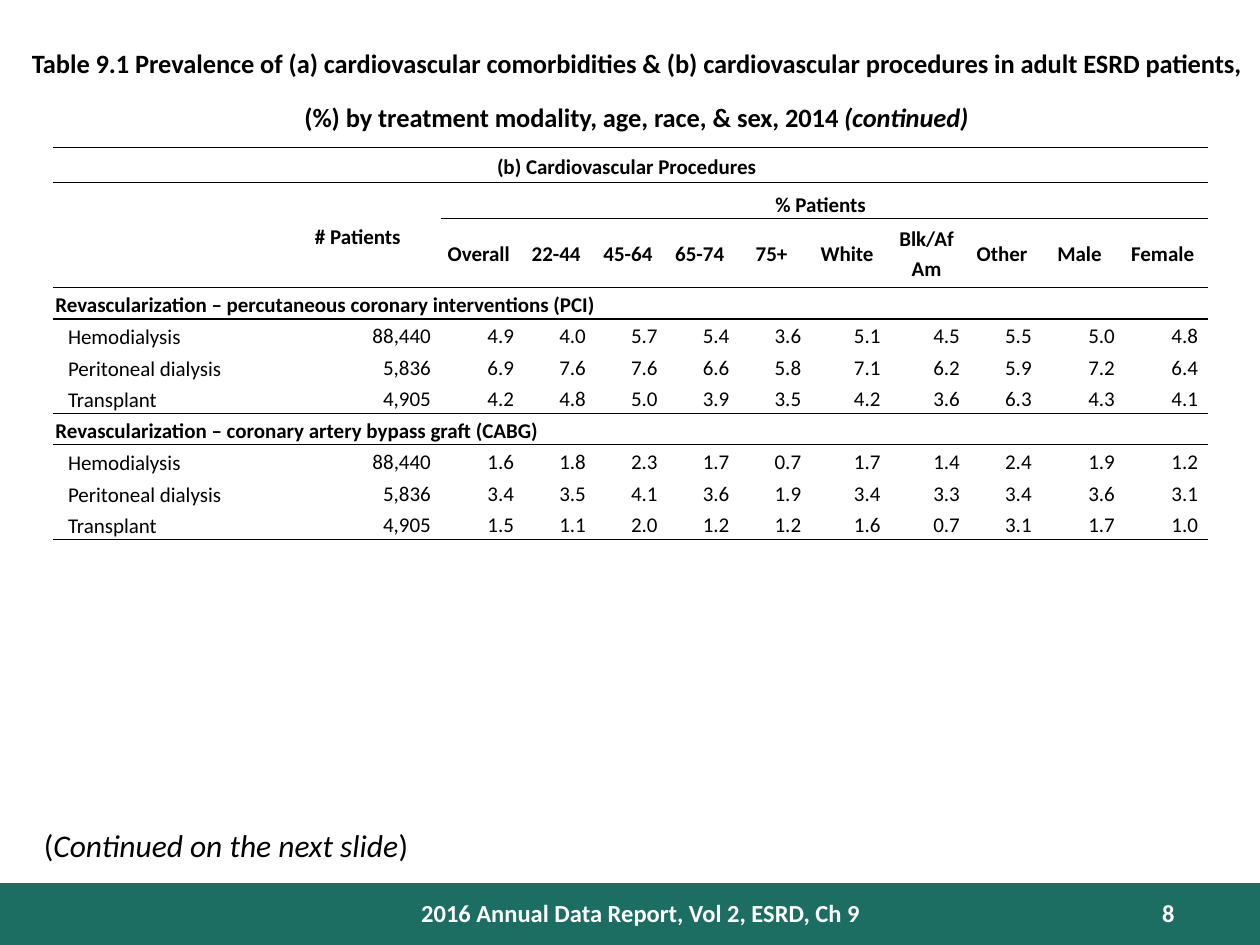
import pptx
import pptx.util
import pptx.dml.color
import pptx.enum.shapes
import pptx.enum.text
from lxml import etree
from pptx.oxml.ns import qn
from pptx.util import Inches, Pt

ALIGN = pptx.enum.text.PP_ALIGN
ANCHOR = pptx.enum.text.MSO_ANCHOR
COLORS = {"text": "000000", "band": "1C6E62", "footer": "FFFFFF"}
FONT = "Calibri"
NO_STYLE = "{2D5ABB26-0587-4C30-8999-92F81FD0307C}"

TITLE = ("Table 9.1 Prevalence of (a) cardiovascular comorbidities & (b) cardiovascular "
         "procedures in adult ESRD patients, (%) by treatment modality, age, race, & sex, 2014 ")
CAPTION = "(b) Cardiovascular Procedures"
GROUPS = ["Overall", "22-44", "45-64", "65-74", "75+", "White", "Blk/Af Am",
          "Other", "Male", "Female"]
SECTIONS = [
    ("Revascularization – percutaneous coronary interventions (PCI)", 7, [
        ("Hemodialysis", "88,440", "4.9 4.0 5.7 5.4 3.6 5.1 4.5 5.5 5.0 4.8"),
        ("Peritoneal dialysis", "5,836", "6.9 7.6 7.6 6.6 5.8 7.1 6.2 5.9 7.2 6.4"),
        ("Transplant", "4,905", "4.2 4.8 5.0 3.9 3.5 4.2 3.6 6.3 4.3 4.1"),
    ]),
    ("Revascularization – coronary artery bypass graft (CABG)", 6, [
        ("Hemodialysis", "88,440", "1.6 1.8 2.3 1.7 0.7 1.7 1.4 2.4 1.9 1.2"),
        ("Peritoneal dialysis", "5,836", "3.4 3.5 4.1 3.6 1.9 3.4 3.3 3.4 3.6 3.1"),
        ("Transplant", "4,905", "1.5 1.1 2.0 1.2 1.2 1.6 0.7 3.1 1.7 1.0"),
    ]),
]
COLUMN_WIDTHS = [1.82, 1.26, 0.66] + [0.57] * 4 + [0.63, 0.63, 0.57, 0.66, 0.66]
ROW_HEIGHTS = [0.28, 0.28, 0.55] + [0.25] * 8
# Horizontal rules: row edge -> line width in points
RULES = {0: 1, 1: 1, 2: 0.5, 3: 1, 7: 0.5, 11: 0.5}


def write(frame, runs, size=12, bold=False, color="text", align=ALIGN.LEFT,
          spacing=None, indent=0, baseline=0):
    """Fill the first paragraph; runs is a string or a list of (text, italic)."""
    paragraph = frame.paragraphs[0]
    paragraph.alignment = align
    if spacing:
        paragraph.line_spacing = spacing
    if indent:
        properties = paragraph._p.get_or_add_pPr()
        properties.set("marL", "0")
        properties.set("indent", str(Inches(indent)))
    for text, italic in [(runs, False)] if isinstance(runs, str) else runs:
        run = paragraph.add_run()
        run.text = text
        run.font.name = FONT
        run.font.size = Pt(size)
        run.font.bold = bold
        run.font.italic = italic
        run.font.color.rgb = pptx.dml.color.RGBColor.from_string(COLORS[color])
        if baseline:
            run.font._element.set("baseline", str(baseline))


def add_text(slide, box, runs, **text_format):
    frame = slide.shapes.add_textbox(*map(Inches, box)).text_frame
    frame.word_wrap = True
    write(frame, runs, **text_format)


def fill_cell(cell, text, anchor=ANCHOR.MIDDLE, **text_format):
    cell.vertical_anchor = anchor
    write(cell.text_frame, text, spacing=1.15, **text_format)


def prepare_cell(cell):
    """Clear the fill, set margins and keep an empty cell from stretching its row."""
    cell.fill.background()
    cell.margin_left, cell.margin_right = Inches(0.02), Inches(0.08)
    cell.margin_top = cell.margin_bottom = 0
    end = etree.SubElement(cell.text_frame.paragraphs[0]._p, qn("a:endParaRPr"))
    end.set("sz", "1200")


def rule_cell(cell, row, column):
    spans_header = column < 2 and row in (1, 2)
    top = None if spans_header and row == 2 else RULES.get(row)
    bottom = RULES.get(3 if spans_header else row + 1)
    properties = cell._tc.get_or_add_tcPr()
    lines = [(tag, width) for tag, width in (("a:lnT", top), ("a:lnB", bottom)) if width]
    for position, (tag, width) in enumerate(lines):
        line = etree.Element(qn(tag), w=str(Pt(width)))
        fill = etree.SubElement(line, qn("a:solidFill"))
        etree.SubElement(fill, qn("a:srgbClr"), val=COLORS["text"])
        properties.insert(position, line)


def add_procedure_table(slide):
    row_count, column_count = len(ROW_HEIGHTS), len(COLUMN_WIDTHS)
    frame = slide.shapes.add_table(row_count, column_count, Inches(0.42), Inches(1.17),
                                   Inches(sum(COLUMN_WIDTHS)), Inches(sum(ROW_HEIGHTS)))
    table = frame.table
    table.first_row = table.horz_banding = False
    table._tbl.tblPr.find(qn("a:tableStyleId")).text = NO_STYLE
    for column, width in zip(table.columns, COLUMN_WIDTHS):
        column.width = Inches(width)
    for row, height in zip(table.rows, ROW_HEIGHTS):
        row.height = Inches(height)
    for row in range(row_count):
        for column in range(column_count):
            prepare_cell(table.cell(row, column))
            rule_cell(table.cell(row, column), row, column)

    last = column_count - 1
    header = {"bold": True, "align": ALIGN.CENTER}
    table.cell(0, 0).merge(table.cell(0, last))
    table.cell(1, 0).merge(table.cell(2, 0))
    table.cell(1, 1).merge(table.cell(2, 1))
    table.cell(1, 2).merge(table.cell(1, last))
    fill_cell(table.cell(0, 0), CAPTION, **header)
    fill_cell(table.cell(1, 1), "# Patients", **header)
    fill_cell(table.cell(1, 2), "% Patients", anchor=ANCHOR.BOTTOM, **header)
    for column, group in enumerate(GROUPS, start=2):
        fill_cell(table.cell(2, column), group, **header)

    row = 3
    for heading, span, records in SECTIONS:
        table.cell(row, 0).merge(table.cell(row, span - 1))
        fill_cell(table.cell(row, 0), heading, bold=True)
        for row, (modality, patients, shares) in enumerate(records, start=row + 1):
            fill_cell(table.cell(row, 0), modality, anchor=ANCHOR.BOTTOM, indent=0.1)
            for column, value in enumerate([patients] + shares.split(), start=1):
                fill_cell(table.cell(row, column), value, align=ALIGN.RIGHT)
        row += 1


def add_title(slide):
    title = slide.shapes.title
    title.left, title.top, title.width, title.height = map(Inches, (0, 0.25, 10, 0.73))
    frame = title.text_frame
    frame.word_wrap = True
    frame.auto_size = pptx.enum.text.MSO_AUTO_SIZE.NONE
    frame.vertical_anchor = ANCHOR.TOP
    frame.margin_left, frame.margin_top = Inches(0.2), Inches(0.08)
    write(frame, [(TITLE, False), ("(continued)", True)], size=26, bold=True,
          align=ALIGN.CENTER, baseline=30000)


def add_footer(slide):
    band = slide.shapes.add_shape(pptx.enum.shapes.MSO_SHAPE.RECTANGLE,
                                  *map(Inches, (0, 7.01, 10, 0.49)))
    band.shadow.inherit = False
    band.fill.solid()
    band.fill.fore_color.rgb = pptx.dml.color.RGBColor.from_string(COLORS["band"])
    band.line.fill.background()
    footer = {"size": 14, "bold": True, "color": "footer"}
    add_text(slide, (3.17, 7.08, 3.83, 0.33), "2016 Annual Data Report, Vol 2, ESRD, Ch 9",
             align=ALIGN.CENTER, **footer)
    add_text(slide, (8.42, 7.08, 1, 0.3), "8", align=ALIGN.RIGHT, **footer)


def main():
    presentation = pptx.Presentation()
    presentation.slide_width, presentation.slide_height = Inches(10), Inches(7.5)
    slide = presentation.slides.add_slide(presentation.slide_layouts[5])
    add_footer(slide)
    add_text(slide, (0.25, 6.51, 6.17, 0.4),
             [("(", False), ("Continued on the next slide", True), (")", False)], size=18)
    add_procedure_table(slide)
    add_title(slide)
    presentation.save("out.pptx")


if __name__ == "__main__":
    main()
